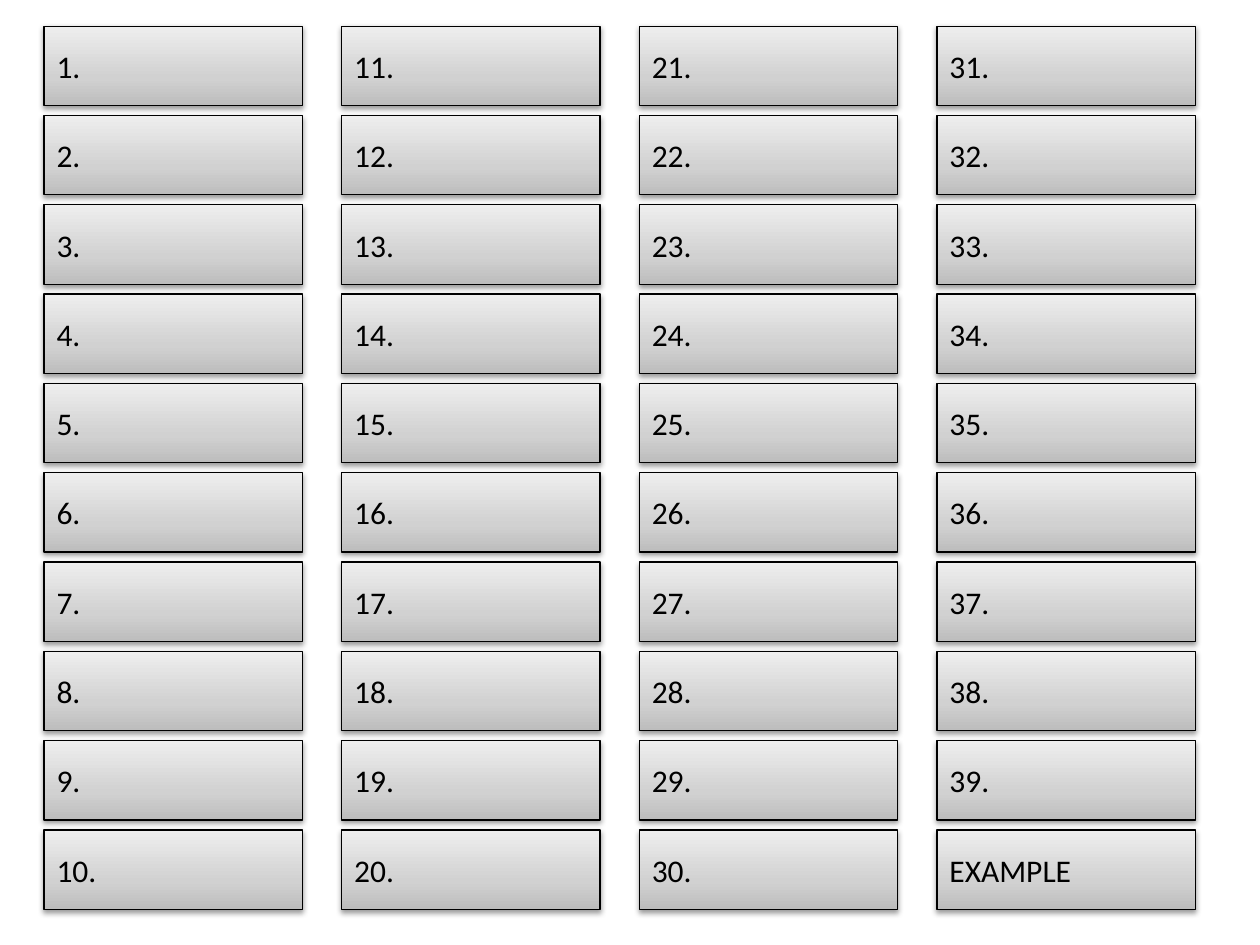
from dataclasses import dataclass

from lxml import etree
from pptx import Presentation
from pptx.dml.color import RGBColor
from pptx.enum.shapes import MSO_SHAPE
from pptx.enum.text import MSO_ANCHOR, PP_ALIGN
from pptx.oxml.ns import qn
from pptx.shapes.autoshape import Shape
from pptx.slide import Slide
from pptx.util import Cm, Pt

RECTANGLE = MSO_SHAPE.RECTANGLE
MIDDLE = MSO_ANCHOR.MIDDLE
LEFT = PP_ALIGN.LEFT

COLUMNS, ROWS = 4, 10
FIRST_LEFT, FIRST_TOP = 0.89, 0.53
COLUMN_STEP, ROW_STEP = 6.0, 1.8
BOX_WIDTH, BOX_HEIGHT = 5.21, 1.6
BLACK = "000000"
GRADIENT_STOPS = ((0, "BDBDBD"), (35, "D1D1D1"), (100, "EEEEEE"))


@dataclass
class AnswerBox:
    label: str
    left: float
    top: float


def color(value: str) -> RGBColor:
    return RGBColor.from_string(value)


def add_color_element(parent: etree._Element, value: str) -> etree._Element:
    return etree.SubElement(parent, qn("a:srgbClr"), val=value)


def fill_with_gradient(shape: Shape) -> None:
    shape.fill.gradient()
    shape.fill.gradient_angle = 90
    stops = shape._element.spPr.find(qn("a:gradFill")).find(qn("a:gsLst"))
    for stop in list(stops):
        stops.remove(stop)
    for percent, value in GRADIENT_STOPS:
        stop = etree.SubElement(stops, qn("a:gs"), pos=str(percent * 1000))
        add_color_element(stop, value)


def add_drop_shadow(shape: Shape) -> None:
    shape.shadow.inherit = False
    effects = shape._element.spPr.find(qn("a:effectLst"))
    shadow = etree.SubElement(
        effects, qn("a:outerShdw"), blurRad="40000", dist="20000",
        dir="5400000", rotWithShape="0",
    )
    etree.SubElement(add_color_element(shadow, BLACK), qn("a:alpha"), val="38000")


def draw_answer_box(page: Slide, answer: AnswerBox) -> None:
    box = page.shapes.add_shape(
        RECTANGLE, Cm(answer.left), Cm(answer.top), Cm(BOX_WIDTH), Cm(BOX_HEIGHT)
    )
    fill_with_gradient(box)
    box.line.color.rgb = color(BLACK)
    box.line.width = Pt(0.75)
    add_drop_shadow(box)
    box.text_frame.word_wrap = True
    box.text_frame.vertical_anchor = MIDDLE
    para = box.text_frame.paragraphs[0]
    para.alignment = LEFT
    span = para.add_run()
    span.text = answer.label
    span.font.name = "Calibri"
    span.font.size = Pt(18)
    span.font.color.rgb = color(BLACK)


def answer_boxes() -> list[AnswerBox]:
    labels = [f"{number}." for number in range(1, COLUMNS * ROWS)] + ["EXAMPLE"]
    return [
        AnswerBox(
            label,
            FIRST_LEFT + index // ROWS * COLUMN_STEP,
            FIRST_TOP + index % ROWS * ROW_STEP,
        )
        for index, label in enumerate(labels)
    ]


def main() -> None:
    deck = Presentation()
    deck.slide_width = Cm(25.4)
    deck.slide_height = Cm(19.05)
    page = deck.slides.add_slide(deck.slide_layouts[6])
    for answer in answer_boxes():
        draw_answer_box(page, answer)
    deck.save("out.pptx")


if __name__ == "__main__":
    main()
